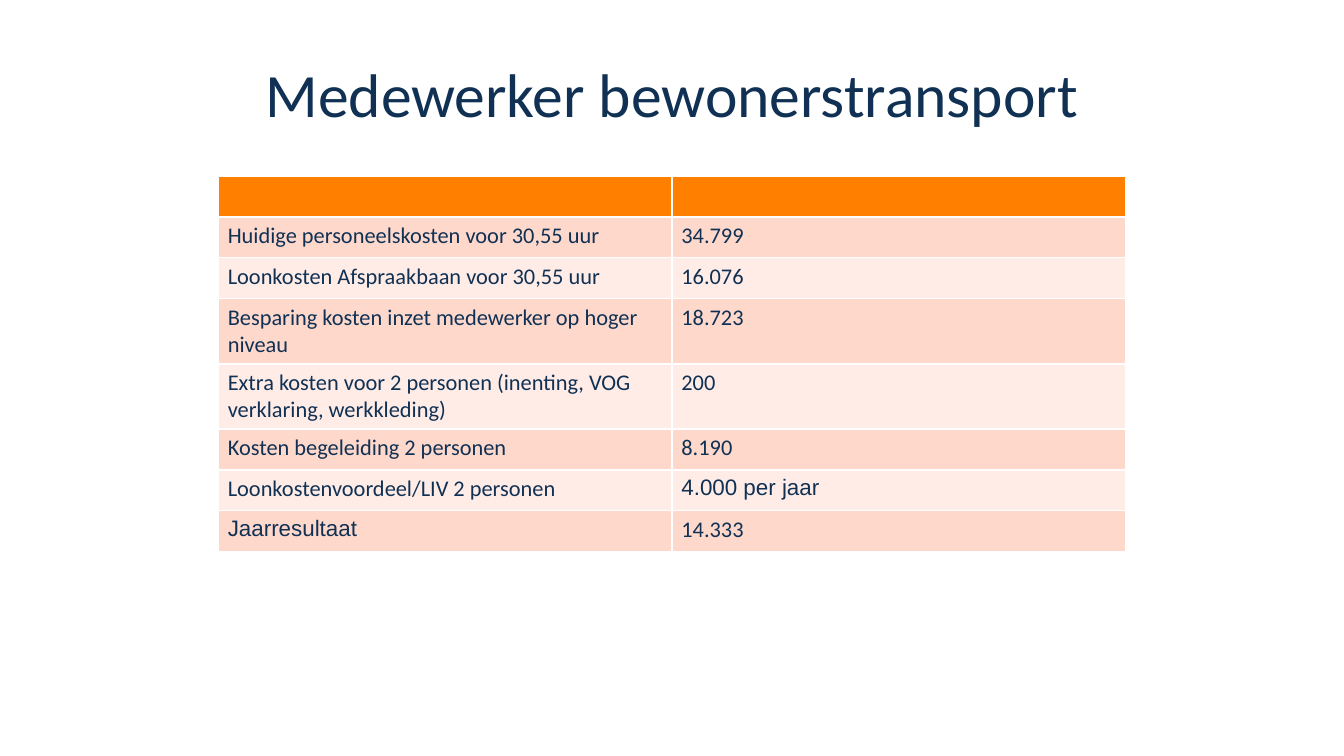
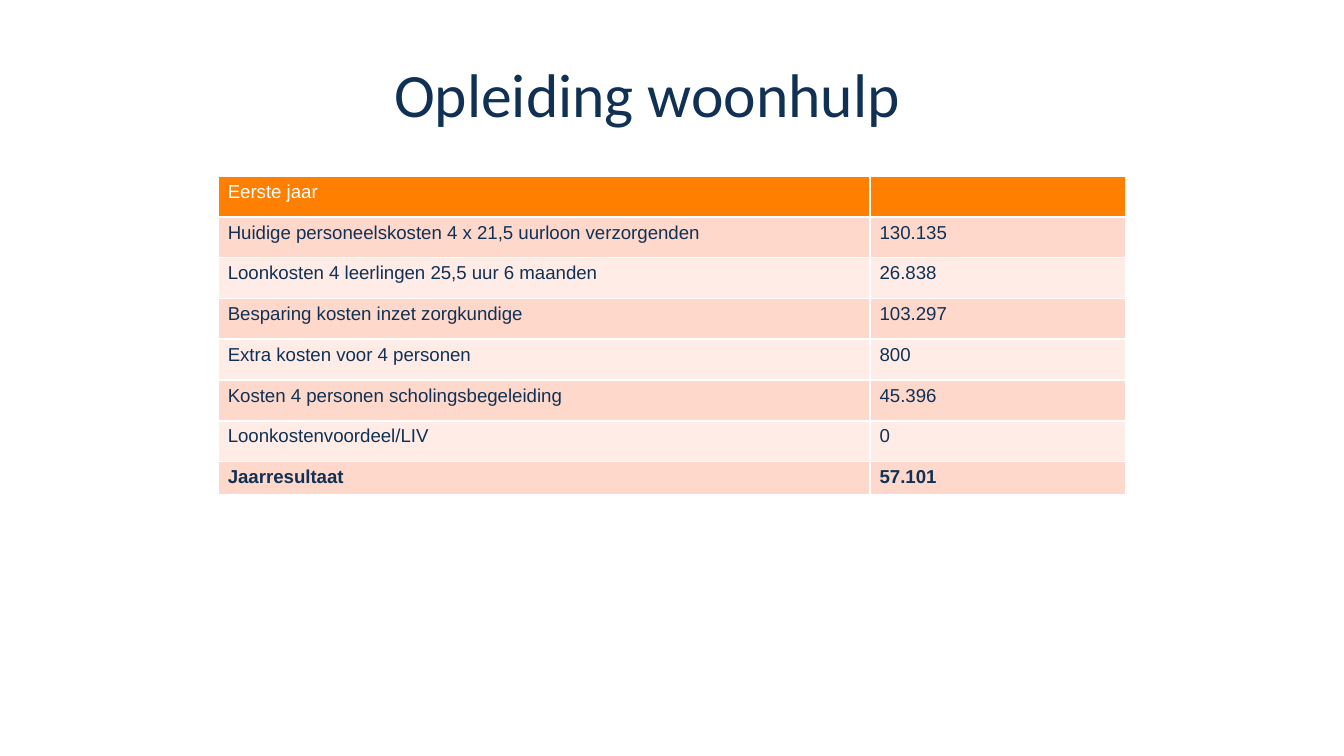
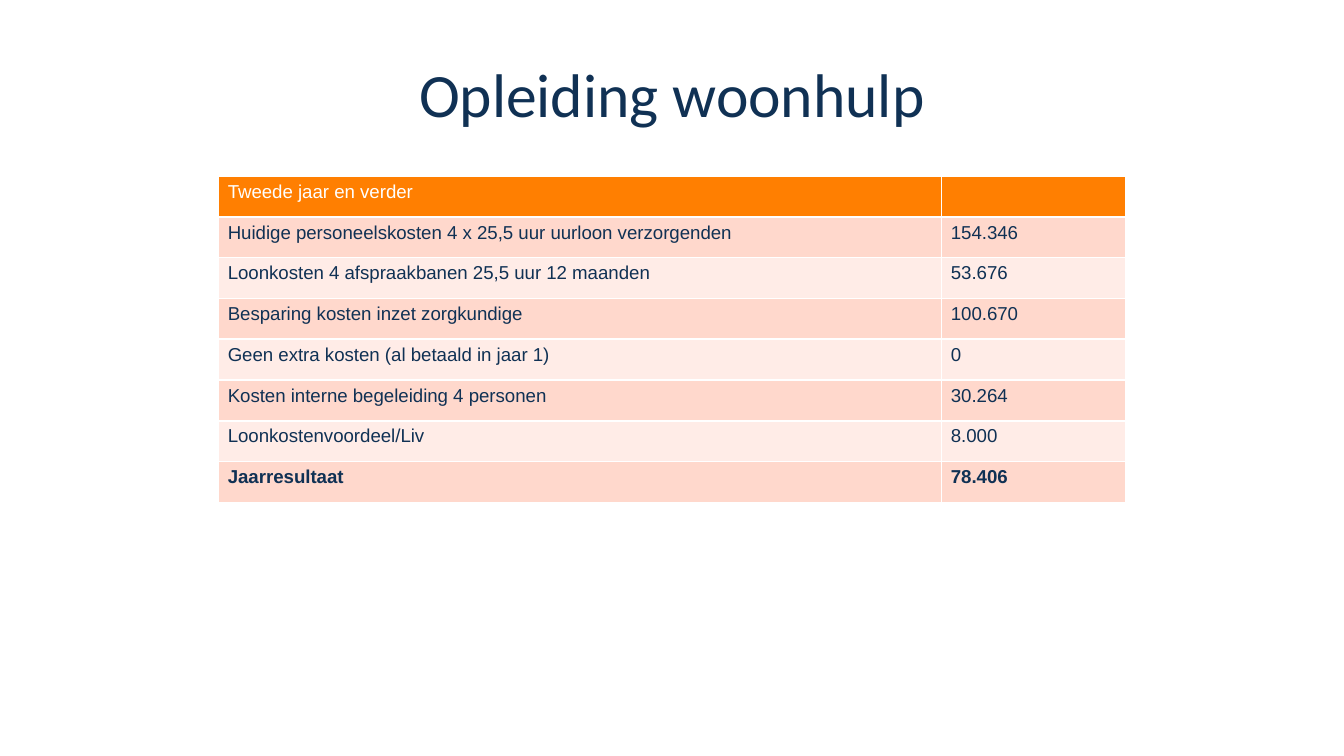
from dataclasses import dataclass

from lxml import etree
from pptx import Presentation
from pptx.dml.color import RGBColor
from pptx.enum.text import MSO_ANCHOR, PP_ALIGN
from pptx.oxml.ns import qn
from pptx.util import Inches, Pt

MIDDLE = MSO_ANCHOR.MIDDLE
CENTER = PP_ALIGN.CENTER
TITLE_ONLY = 5

# Shared look
SLIDE_WIDTH = 10
SLIDE_HEIGHT = SLIDE_WIDTH * 9 / 16
NAVY, WHITE, ORANGE = "103154", "FFFFFF", "FF7F01"
BANDS = ("FFD8CC", "FFECE7")
TITLE_BOX = (0.5, 0.22, 9, 0.94)
TITLE_FONT = {"name": "Calibri", "size": Pt(33)}
TABLE_TOP, TABLE_WIDTH = 1.31, 6.75
TABLE_LEFT = (SLIDE_WIDTH - TABLE_WIDTH) / 2
ROW_HEIGHT = 2.43 / 8
CELL_MARGINS = {
    "margin_left": Inches(0.07), "margin_right": Inches(0.07),
    "margin_top": Inches(0.04), "margin_bottom": Inches(0.04),
}


@dataclass
class CostSlide:
    title: str
    rows: list[tuple[str, str]]  # the first row is the header
    label_width: float
    height: float
    font: str = "Arial"
    size: int = 10
    bold_result: bool = True
    title_margin: float = 0.1  # right inset of the title
    special_rows: tuple[int, ...] = ()  # share the height the regular rows leave
    arial_cells: tuple[tuple[int, int], ...] = ()


COST_SLIDES = [
    CostSlide(
        "Medewerker bewonerstransport",
        [
            ("", ""),
            ("Huidige personeelskosten voor 30,55 uur", "34.799"),
            ("Loonkosten Afspraakbaan voor 30,55 uur", "16.076"),
            ("Besparing kosten inzet medewerker op hoger niveau", "18.723"),
            ("Extra kosten voor 2 personen (inenting, VOG verklaring, werkkleding)", "200"),
            ("Kosten begeleiding 2 personen", "8.190"),
            ("Loonkostenvoordeel/LIV 2 personen", "4.000 per jaar"),
            ("Jaarresultaat", "14.333"),
        ],
        label_width=TABLE_WIDTH / 2, height=2.77, font="Calibri", size=12,
        bold_result=False, special_rows=(3, 4), arial_cells=((6, 1), (7, 0)),
    ),
    CostSlide(
        "Opleiding woonhulp",
        [
            ("Eerste jaar", ""),
            ("Huidige personeelskosten 4 x 21,5 uurloon verzorgenden", "130.135"),
            ("Loonkosten 4 leerlingen 25,5 uur 6 maanden", "26.838"),
            ("Besparing kosten inzet zorgkundige", "103.297"),
            ("Extra kosten voor 4 personen", "800"),
            ("Kosten 4 personen scholingsbegeleiding", "45.396"),
            ("Loonkostenvoordeel/LIV", "0"),
            ("Jaarresultaat", "57.101"),
        ],
        label_width=4.85, height=2.37, title_margin=0.47, special_rows=(7,),
    ),
    CostSlide(
        "Opleiding woonhulp",
        [
            ("Tweede jaar en verder", ""),
            ("Huidige personeelskosten 4 x 25,5 uur uurloon verzorgenden", "154.346"),
            ("Loonkosten 4 afspraakbanen 25,5 uur 12 maanden", "53.676"),
            ("Besparing kosten inzet zorgkundige", "100.670"),
            ("Geen extra kosten (al betaald in jaar 1)", "0"),
            ("Kosten interne begeleiding 4 personen", "30.264"),
            ("Loonkostenvoordeel/Liv", "8.000"),
            ("Jaarresultaat", "78.406"),
        ],
        label_width=5.38, height=2.43,
    ),
]


def rgb(color: str) -> RGBColor:
    return RGBColor.from_string(color)


def set_attrs(target, values: dict) -> None:
    for name, value in values.items():
        setattr(target, name, value)


def write(p, text: str, color: str, font: dict) -> None:
    """Fill a paragraph; an empty one only gets its text size."""
    if not text:
        etree.SubElement(p._p, qn("a:endParaRPr"), sz=str(int(font["size"].pt * 100)))
        return
    r = p.add_run()
    r.text = text
    set_attrs(r.font, font)
    r.font.color.rgb = rgb(color)


def add_title(s, spec: CostSlide) -> None:
    sp = s.shapes.title
    sp.left, sp.top, sp.width, sp.height = map(Inches, TITLE_BOX)
    tf = sp.text_frame
    set_attrs(tf, {
        "word_wrap": True, "vertical_anchor": MIDDLE,
        "margin_right": Inches(spec.title_margin),
    })
    p = tf.paragraphs[0]
    p.alignment = CENTER
    write(p, spec.title, NAVY, TITLE_FONT)


def add_cost_table(s, spec: CostSlide) -> None:
    count = len(spec.rows)
    # The default table style supplies the white rules
    table = s.shapes.add_table(
        count, 2, Inches(TABLE_LEFT), Inches(TABLE_TOP),
        Inches(TABLE_WIDTH), Inches(spec.height),
    ).table

    # Column widths and row heights
    table.columns[0].width = Inches(spec.label_width)
    table.columns[1].width = Inches(TABLE_WIDTH - spec.label_width)
    special = spec.special_rows
    rest = spec.height - ROW_HEIGHT * (count - len(special))
    for i, row in enumerate(table.rows):
        row.height = Inches(rest / len(special) if i in special else ROW_HEIGHT)

    # Cells
    for i, texts in enumerate(spec.rows):
        header = i == 0
        for j, text in enumerate(texts):
            cell = table.cell(i, j)
            set_attrs(cell, CELL_MARGINS)
            cell.fill.solid()
            cell.fill.fore_color.rgb = rgb(ORANGE if header else BANDS[(i - 1) % 2])
            font = {
                "name": "Arial" if (i, j) in spec.arial_cells else spec.font,
                "size": Pt(spec.size),
                "bold": spec.bold_result and i == count - 1,
            }
            write(cell.text_frame.paragraphs[0], text, WHITE if header else NAVY, font)


def main() -> None:
    prs = Presentation()
    prs.slide_width, prs.slide_height = Inches(SLIDE_WIDTH), Inches(SLIDE_HEIGHT)
    for spec in COST_SLIDES:
        s = prs.slides.add_slide(prs.slide_layouts[TITLE_ONLY])
        add_title(s, spec)
        add_cost_table(s, spec)
    prs.save("out.pptx")


if __name__ == "__main__":
    main()
